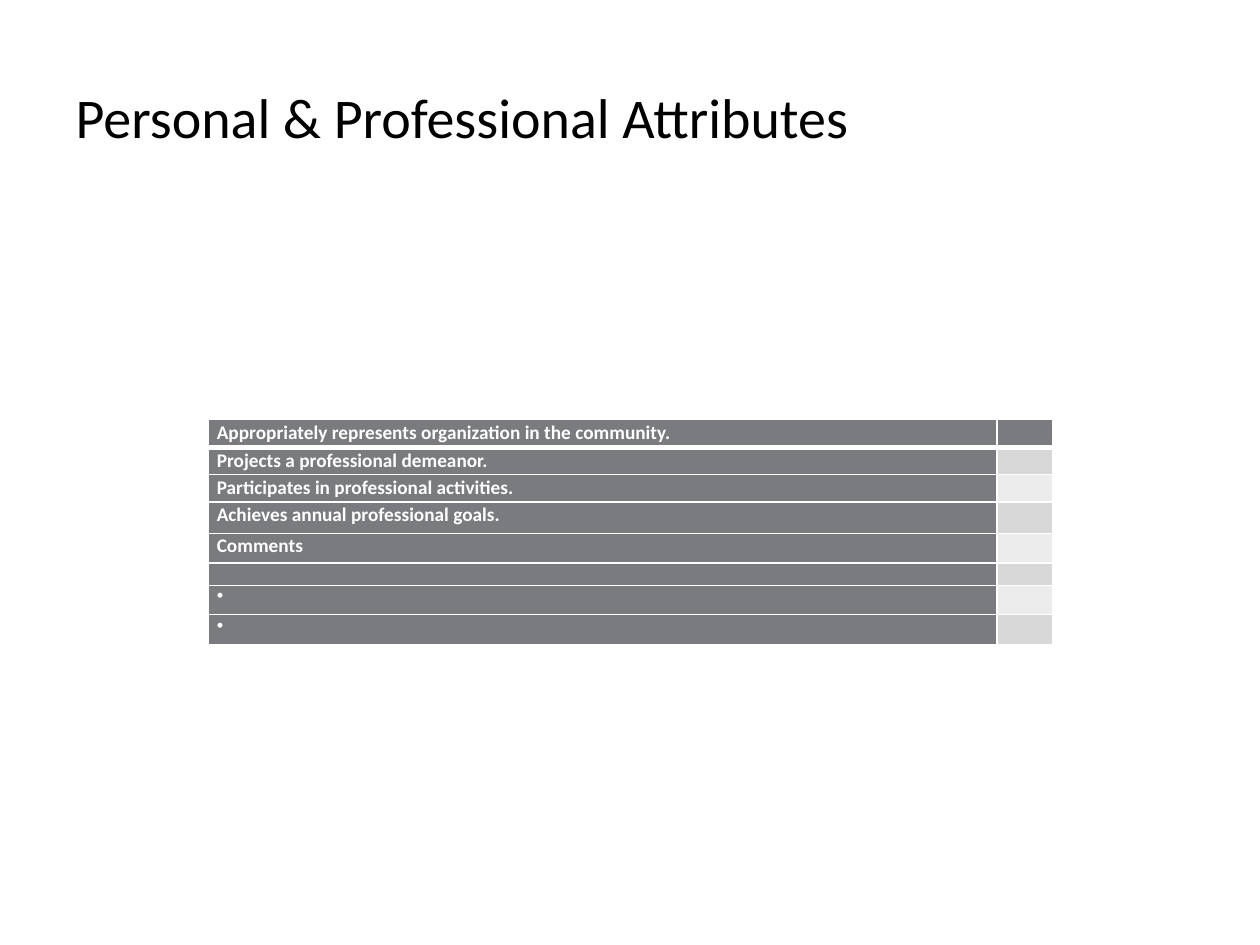
import pptx
import pptx.dml.color
import pptx.enum.text
import pptx.oxml.ns
import pptx.util
from lxml import etree

Cm, Pt, qn = pptx.util.Cm, pptx.util.Pt, pptx.oxml.ns.qn


def color(hex_string):
    return pptx.dml.color.RGBColor.from_string(hex_string)


class Deck:
    font = "Calibri"
    white, black = "FFFFFF", "000000"
    dark, band_a, band_b = "797B7E", "D7D7D8", "ECECEC"

    def __init__(self, width, height):
        self.prs = pptx.Presentation()
        self.prs.slide_width, self.prs.slide_height = Cm(width), Cm(height)
        self.slide = self.prs.slides.add_slide(self.prs.slide_layouts[5])

    def run(self, p, text, size, hex_string, bold=False):
        r = p.add_run()
        r.text = text
        r.font.name, r.font.size, r.font.bold = self.font, Pt(size), bold
        r.font.color.rgb = color(hex_string)

    def title(self, text, left, top, width, height):
        sp = self.slide.shapes.title
        sp.left, sp.top, sp.width, sp.height = map(Cm, (left, top, width, height))
        tf = sp.text_frame
        tf.vertical_anchor = pptx.enum.text.MSO_ANCHOR.MIDDLE
        p = tf.paragraphs[0]
        p.alignment = pptx.enum.text.PP_ALIGN.LEFT
        self.run(p, text, 32, self.black)

    def borders(self, cell, bottom):
        tc_pr = cell._tc.get_or_add_tcPr()
        for side, width in (("L", 1), ("R", 1), ("T", 1), ("B", bottom)):
            ln = etree.SubElement(tc_pr, qn(f"a:ln{side}"), w=str(Pt(width)))
            fill = etree.SubElement(ln, qn("a:solidFill"))
            etree.SubElement(fill, qn("a:srgbClr"), val=self.white)

    def cell(self, cell, text, fill, bottom=1, bullet=False):
        self.borders(cell, bottom)
        cell.fill.solid()
        cell.fill.fore_color.rgb = color(fill)
        cell.margin_left = cell.margin_right = Cm(0.17)
        cell.margin_top = cell.margin_bottom = 0
        p = cell.text_frame.paragraphs[0]
        p.line_spacing = 1.05
        if bullet:
            etree.SubElement(p._p.get_or_add_pPr(), qn("a:buChar"), char="•")
        if text:
            self.run(p, text, 11, self.white, bold=True)
        else:
            # Keeps an empty cell from stretching its row
            etree.SubElement(p._p, qn("a:endParaRPr"), sz="800")

    def table(self, rows, left, top, col_widths):
        heights = [height for _, height, _ in rows]
        table = self.slide.shapes.add_table(
            len(rows), len(col_widths), Cm(left), Cm(top),
            Cm(sum(col_widths)), Cm(sum(heights))).table
        for col, width in zip(table.columns, col_widths):
            col.width = Cm(width)
        for i, (text, height, bullet) in enumerate(rows):
            table.rows[i].height = Cm(height)
            # Heavy rule under the header, alternating bands below it
            bottom = 3 if i == 0 else 1
            band = self.dark if i == 0 else (self.band_b, self.band_a)[i % 2]
            self.cell(table.cell(i, 0), text, self.dark, bottom, bullet)
            self.cell(table.cell(i, 1), "", band, bottom)


def main():
    deck = Deck(25.4, 19.05)

    # Title
    deck.title("Personal & Professional Attributes", 1.27, 0.76, 22.86, 3.18)

    # Attributes: text, row height, bulleted
    rows = [
        ("Appropriately represents organization in the community.", 0.56, False),
        ("Projects a professional demeanor.", 0.55, False),
        ("Participates in professional activities.", 0.55, False),
        ("Achieves annual professional goals.", 0.63, False),
        ("Comments", 0.6, False),
        ("", 0.45, False),
        (" ", 0.59, True),
        (" ", 0.6, True),
    ]
    deck.table(rows, 4.2, 8.46, [15.9, 1.12])

    deck.prs.save("out.pptx")


if __name__ == "__main__":
    main()
